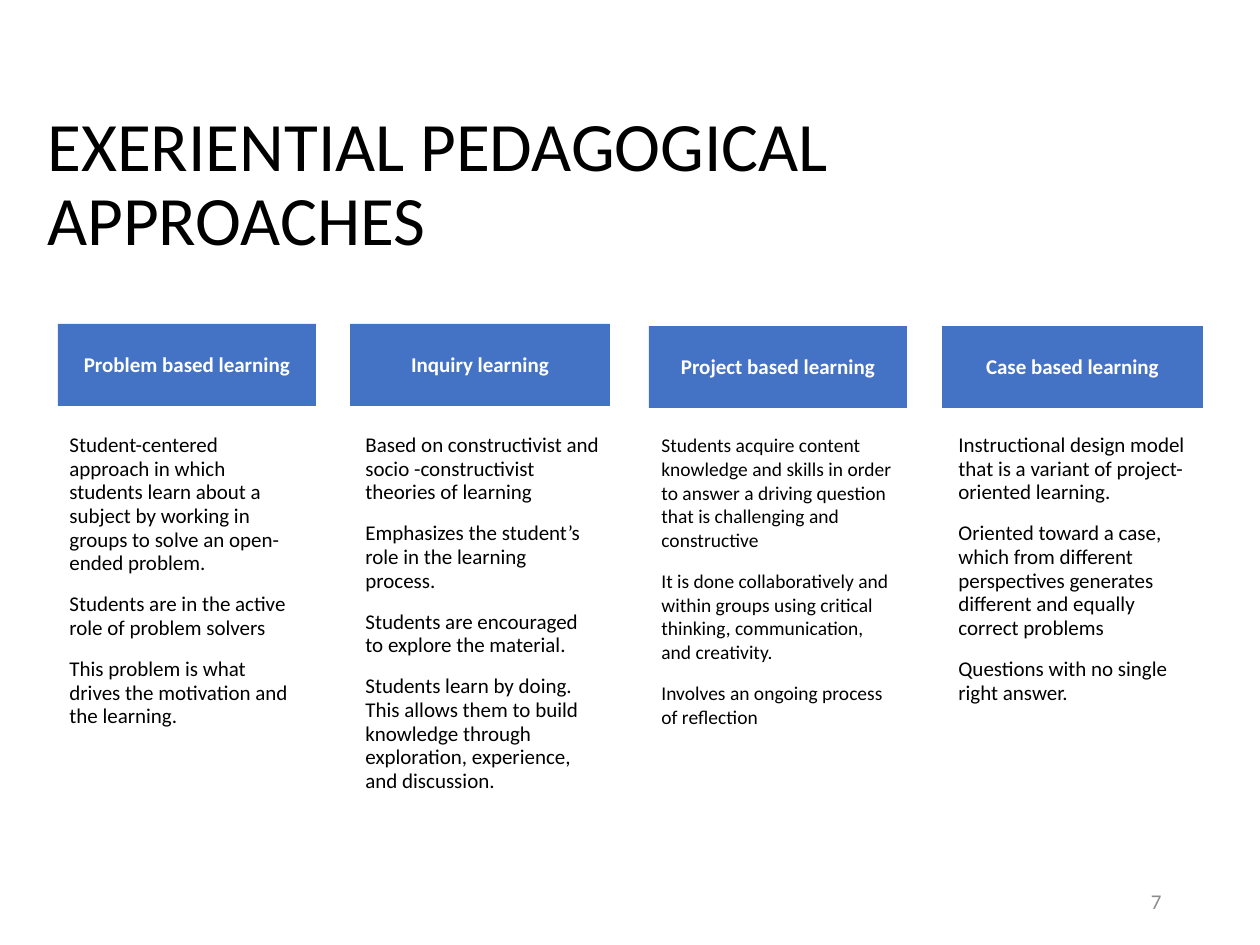
from pptx import Presentation, util as u
from pptx.dml.color import RGBColor
from pptx.enum import shapes, text

PX = 914400 / 126
COLORS = {"ink": "000000", "header": "4472C4", "header_text": "FFFFFF", "number": "8C8C8C"}
FONT = "Calibri"
LINE = u.Pt(13.5)
BODY_TOP = 427

# heading, header (left, top, width), body (left, width, height), body size, paragraphs
APPROACHES = [
    ("Problem based learning", (58, 324, 258), (57, 257, 329), 12, [
        "Student-centered approach in which students learn about a subject by working in "
        "groups to solve an open-ended problem.",
        "Students are in the active role of problem solvers",
        "This problem is what drives the motivation and the learning.",
    ]),
    ("Inquiry learning", (350, 324, 260), (353, 260, 367), 12, [
        "Based on constructivist and socio -constructivist theories of learning",
        "Emphasizes the student’s role in the learning process.",
        "Students are encouraged to explore the material.",
        "Students learn by doing. This allows them to build knowledge through exploration, "
        "experience, and discussion.",
    ]),
    ("Project based learning", (649, 326, 258), (649, 260, 329), 11.1, [
        "Students acquire content knowledge and skills in order to answer a driving question "
        "that is challenging and constructive",
        "It is done collaboratively and within groups using critical thinking, communication, "
        "and creativity.",
        "Involves an ongoing process of reflection",
    ]),
    ("Case based learning", (942, 326, 261), (946, 261, 329), 12, [
        "Instructional design model that is a variant of project-oriented learning.",
        "Oriented toward a case, which from different perspectives generates different and "
        "equally correct problems",
        "Questions with no single right answer.",
    ]),
]


def px(*lengths):
    return [u.Emu(round(length * PX)) for length in lengths]


def write(shape, paragraphs, size, color, align=text.PP_ALIGN.LEFT,
          anchor=text.MSO_ANCHOR.MIDDLE, spacing=None, bold=False):
    """Fill a shape with evenly styled paragraphs, 10 pt apart."""
    frame = shape.text_frame
    frame.word_wrap = True
    frame.vertical_anchor = anchor
    for index, words in enumerate(paragraphs):
        paragraph = frame.add_paragraph() if index else frame.paragraphs[0]
        paragraph.text = words
        paragraph.alignment = align
        paragraph.line_spacing = spacing
        if index:
            paragraph.space_before = u.Pt(10)
        font = paragraph.font
        font.name, font.size, font.bold = FONT, u.Pt(size), bold
        font.color.rgb = RGBColor.from_string(COLORS[color])


def add_text(slide, box, paragraphs, size, color, **style):
    write(slide.shapes.add_textbox(*px(*box)), paragraphs, size, color, **style)


def add_header(slide, left, top, width, heading):
    header = slide.shapes.add_shape(shapes.MSO_SHAPE.RECTANGLE, *px(left, top, width, 82))
    header.shadow.inherit = False
    header.fill.solid()
    header.fill.fore_color.rgb = RGBColor.from_string(COLORS["header"])
    header.line.fill.background()
    frame = header.text_frame
    frame.margin_left = frame.margin_right = px(20)[0]
    frame.margin_top = frame.margin_bottom = px(15)[0]
    write(header, [heading], 12, "header_text", align=text.PP_ALIGN.CENTER,
          spacing=LINE, bold=True)


def main():
    deck = Presentation()
    deck.slide_width, deck.slide_height = px(1260, 945)
    slide = deck.slides.add_slide(deck.slide_layouts[6])

    add_text(slide, (35, 123, 1149, 126), ["EXERIENTIAL PEDAGOGICAL APPROACHES"],
             39.6, "ink", spacing=0.9)
    for heading, header, (left, width, height), size, points in APPROACHES:
        add_header(slide, *header, heading)
        add_text(slide, (left, BODY_TOP, width, height), points, size, "ink",
                 anchor=text.MSO_ANCHOR.TOP, spacing=LINE)
    add_text(slide, (890, 876, 284, 50), ["7"], 12, "number", align=text.PP_ALIGN.RIGHT)

    deck.save("out.pptx")


if __name__ == "__main__":
    main()
